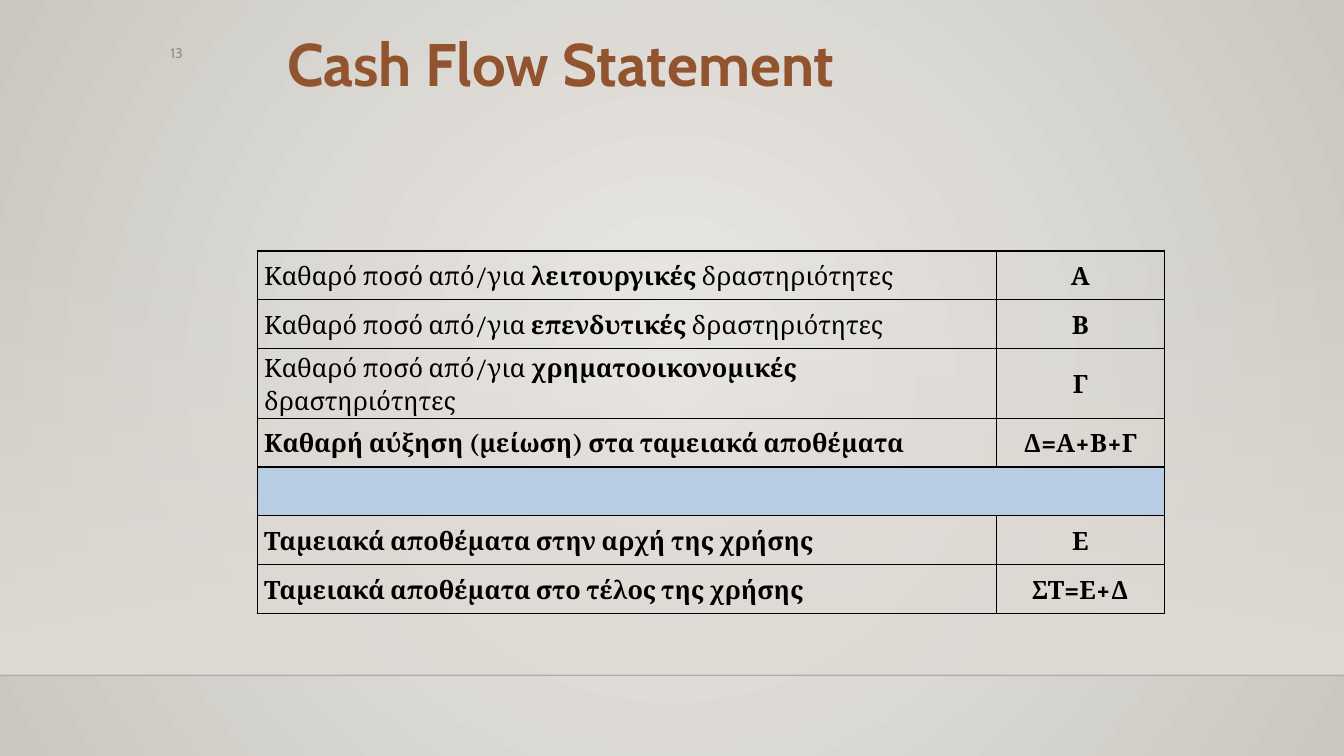
from pptx import Presentation
from pptx.dml.color import RGBColor
from pptx.enum.shapes import MSO_CONNECTOR as Connector, MSO_SHAPE as Shape
from pptx.enum.text import MSO_ANCHOR as Anchor, PP_ALIGN as Align
from pptx.oxml import parse_xml
from pptx.oxml.ns import nsdecls, qn
from pptx.util import Inches, Pt
from lxml.etree import SubElement

TITLE = "Cash Flow Statement"
PAGE_NUMBER = "13"
# Each label is a list of (words, bold); None is the blue separator row.
STATEMENT = [
    ([("Καθαρό ποσό από/για ", False), ("λειτουργικές", True), (" δραστηριότητες", False)], "Α"),
    ([("Καθαρό ποσό από/για ", False), ("επενδυτικές", True), (" δραστηριότητες", False)], "Β"),
    ([("Καθαρό ποσό από/για ", False), ("χρηματοοικονομικές", True), (" δραστηριότητες", False)], "Γ"),
    ([("Καθαρή αύξηση (μείωση) στα ταμειακά αποθέματα", True)], "Δ=Α+Β+Γ"),
    None,
    ([("Ταμειακά αποθέματα στην αρχή της χρήσης", True)], "Ε"),
    ([("Ταμειακά αποθέματα στο τέλος της χρήσης", True)], "ΣΤ=Ε+Δ"),
]

THEME = {
    "center": "ECEAE7", "edge": "CAC7C1", "floor": "DFDBD5", "floor_line": "000001",
    "title": "92532F", "number": "8C8C8C", "ink": "000000", "separator": "B8CCE4",
    "heading_font": "Cabin", "table_font": "Cambria",
    "title_size": 42.9, "number_size": 10, "table_size": 18,
}
SLIDE_W, SLIDE_H = 13.33, 7.5
FLOOR_TOP, FLOOR_BOTTOM = 2.21, 6.7
TABLE_LEFT, TABLE_TOP, TABLE_H = 2.55, 2.49, 3.39
COLUMN_WIDTHS = (7.33, 1.67)
CELL_INSET = 0.07


def color(key):
    return RGBColor.from_string(THEME[key])


def style_font(font, family, size, ink, bold=False):
    font.name, font.size, font.bold = THEME[family], Pt(THEME[size]), bold
    font.color.rgb = color(ink)


def set_opacity(color_element, percent):
    SubElement(color_element, qn("a:alpha")).set("val", str(percent * 1000))


def set_gradient(fill, keys):
    fill.gradient()
    for stop, key in zip(fill.gradient_stops, keys):
        stop.color.rgb = color(key)


def paint_background(slide):
    set_gradient(slide.background.fill, ("center", "edge"))
    gradient = slide.element.xpath(".//p:bgPr/a:gradFill")[0]
    gradient.remove(gradient.find(qn("a:lin")))
    gradient.append(parse_xml(
        f'<a:path {nsdecls("a")} path="circle">'
        '<a:fillToRect l="50000" t="50000" r="50000" b="50000"/></a:path>'))


def add_floor(slide):
    """Fading band that ends in a faint line across the slide."""
    band = slide.shapes.add_shape(Shape.RECTANGLE, 0, Inches(FLOOR_TOP), Inches(SLIDE_W),
                                  Inches(FLOOR_BOTTOM - FLOOR_TOP))
    band.shadow.inherit = False
    band.line.fill.background()
    set_gradient(band.fill, ("floor", "floor"))
    band.fill.gradient_angle = 270
    set_opacity(band.element.xpath(".//a:gs/a:srgbClr")[0], 0)

    edge = slide.shapes.add_connector(Connector.STRAIGHT, 0, Inches(FLOOR_BOTTOM),
                                      Inches(SLIDE_W), Inches(FLOOR_BOTTOM))
    edge.line.width = Pt(1)
    edge.line.color.rgb = color("floor_line")
    set_opacity(edge.element.xpath(".//a:ln//a:srgbClr")[0], 20)
    SubElement(edge.element.spPr, qn("a:effectLst"))


def add_heading(slide, words, box, size, ink, bold, anchor):
    frame = slide.shapes.add_textbox(*map(Inches, box)).text_frame
    frame.word_wrap = True
    frame.vertical_anchor = anchor
    frame.text = words
    style_font(frame.paragraphs[0].runs[0].font, "heading_font", size, ink, bold)


def style_cell(cell, fill_key=None):
    cell.margin_left = cell.margin_right = Inches(CELL_INSET)
    cell.margin_top = cell.margin_bottom = 0
    cell.vertical_anchor = Anchor.MIDDLE
    properties = cell._tc.get_or_add_tcPr()
    for side in ("lnL", "lnR", "lnT", "lnB"):
        properties.append(parse_xml(
            f'<a:{side} {nsdecls("a")} w="{Pt(1)}"><a:solidFill>'
            f'<a:srgbClr val="{THEME["ink"]}"/></a:solidFill></a:{side}>'))
    if fill_key:
        cell.fill.solid()
        cell.fill.fore_color.rgb = color(fill_key)
    else:
        cell.fill.background()


def write_cell(cell, pieces, align):
    paragraph = cell.text_frame.paragraphs[0]
    paragraph.alignment = align
    paragraph.line_spacing = 1.15
    for words, bold in pieces:
        run = paragraph.add_run()
        run.text = words
        style_font(run.font, "table_font", "table_size", "ink", bold)


def add_statement(slide):
    table = slide.shapes.add_table(
        len(STATEMENT), len(COLUMN_WIDTHS), Inches(TABLE_LEFT), Inches(TABLE_TOP),
        Inches(sum(COLUMN_WIDTHS)), Inches(TABLE_H)).table
    table.first_row = table.horz_banding = False
    for column, width in zip(table.columns, COLUMN_WIDTHS):
        column.width = Inches(width)
    for row, entry in zip(table.rows, STATEMENT):
        label_cell, amount_cell = row.cells
        for cell in (label_cell, amount_cell):
            style_cell(cell, None if entry else "separator")
        if entry:
            label, amount = entry
            write_cell(label_cell, label, Align.LEFT)
            write_cell(amount_cell, [(amount, True)], Align.CENTER)
        else:
            label_cell.merge(amount_cell)


def main():
    deck = Presentation()
    deck.slide_width, deck.slide_height = Inches(SLIDE_W), Inches(SLIDE_H)
    slide = deck.slides.add_slide(deck.slide_layouts[6])
    paint_background(slide)
    add_floor(slide)
    add_heading(slide, TITLE, (2.75, 0.21, 8.65, 1.25), "title_size", "title", True, Anchor.TOP)
    add_heading(slide, PAGE_NUMBER, (1.59, 0.36, 6.49, 0.34), "number_size", "number", False,
                Anchor.MIDDLE)
    add_statement(slide)
    deck.save("out.pptx")


if __name__ == "__main__":
    main()
